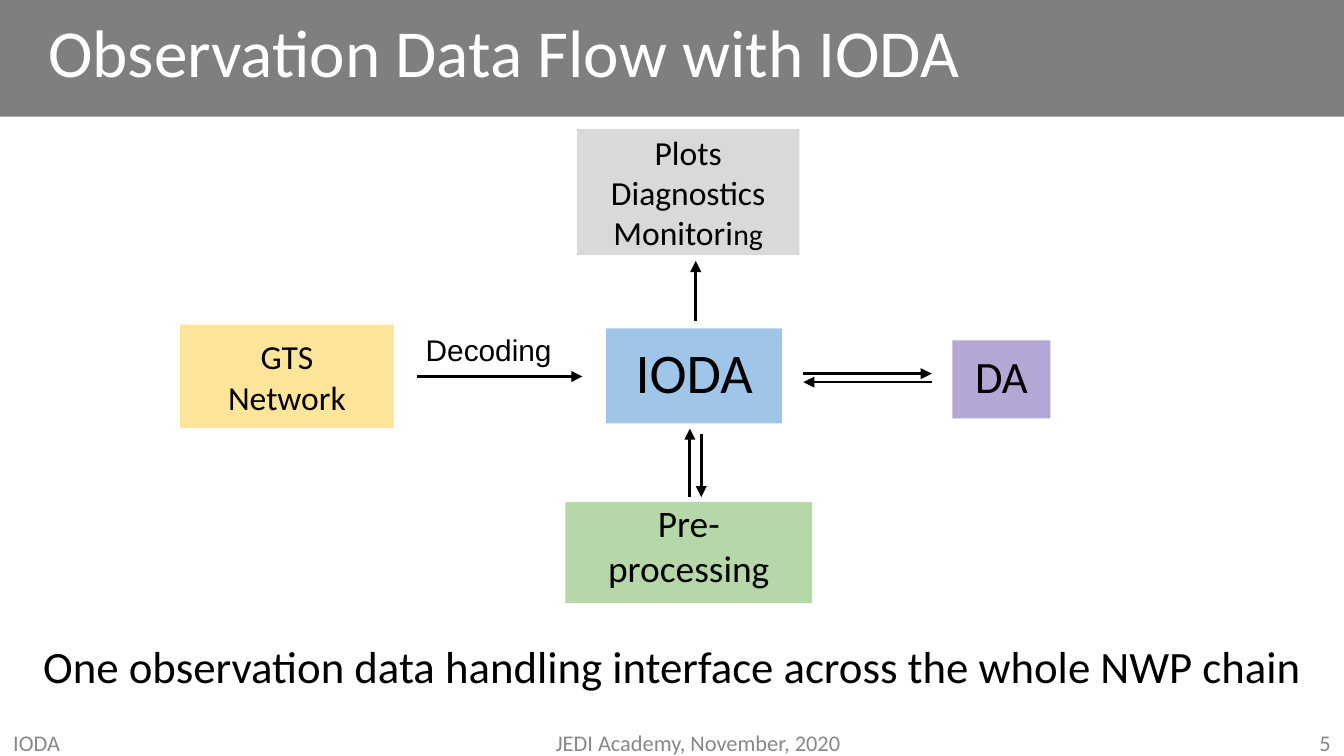
from lxml.etree import SubElement
from pptx import Presentation
from pptx.dml.color import RGBColor
from pptx.enum.shapes import MSO_CONNECTOR as Connector, MSO_SHAPE as Shape
from pptx.enum.text import MSO_ANCHOR as Anchor, MSO_AUTO_SIZE as AutoSize, PP_ALIGN as Align
from pptx.oxml.ns import qn
from pptx.util import Pt

COLORS = {
    "black": "000000",
    "white": "FFFFFF",
    "footer": "888888",
    "network": "FFE599",
    "ioda": "9FC5E8",
    "assimilation": "B4A7D6",
    "plots": "D9D9D9",
    "preprocessing": "B6D7A8",
}


def color(name):
    return RGBColor.from_string(COLORS[name])


def write(frame, text, size=18, ink="black", font="Calibri", align=Align.CENTER,
          anchor=Anchor.MIDDLE, insets=(7.2, 7.2, 7.2, 7.2), wrap=True, ending=None):
    frame.auto_size = AutoSize.NONE
    frame.word_wrap = wrap
    frame.vertical_anchor = anchor
    frame.margin_left, frame.margin_top, frame.margin_right, frame.margin_bottom = map(Pt, insets)
    for index, line in enumerate(text.split("\n")):
        para = frame.paragraphs[0] if index == 0 else frame.add_paragraph()
        para.alignment = align
        para.add_run().text = line
    if ending:
        para.add_run().text = ending[0]
    for para in frame.paragraphs:
        for span in para.runs:
            span.font.name = font
            span.font.size = Pt(size)
            span.font.color.rgb = color(ink)
    if ending:
        frame.paragraphs[-1].runs[-1].font.size = Pt(ending[1])


class FlowSlide:
    line_width = Pt(1.5)
    small_insets = (7.2, 3.6, 7.2, 3.6)

    def __init__(self, deck):
        self.slide = deck.slides.add_slide(deck.slide_layouts[5])
        self.shapes = self.slide.shapes

    def rectangle(self, place, fill):
        box = self.shapes.add_shape(Shape.RECTANGLE, *map(Pt, place))
        box.shadow.inherit = False
        box.fill.solid()
        box.fill.fore_color.rgb = color(fill)
        box.line.fill.background()
        return box

    def title(self, text, place, bar_place):
        title = self.shapes.title
        title.left, title.top, title.width, title.height = map(Pt, place)
        write(title.text_frame, text, size=36, ink="white", align=Align.LEFT,
              insets=self.small_insets)
        bar = self.rectangle(bar_place, "black")
        tint = bar.element.spPr.find(qn("a:solidFill"))[0]
        SubElement(tint, qn("a:alpha")).set("val", "50000")
        title.element.addprevious(bar.element)

    def box(self, text, place, fill, **style):
        write(self.rectangle(place, fill).text_frame, text, **style)

    def label(self, text, place, **style):
        label = self.shapes.add_textbox(*map(Pt, place))
        write(label.text_frame, text, **style)

    def arrow(self, *ends):
        arrow = self.shapes.add_connector(Connector.STRAIGHT, *map(Pt, ends))
        arrow.line.color.rgb = color("black")
        arrow.line.width = self.line_width
        properties = arrow.element.spPr
        SubElement(properties.find(qn("a:ln")), qn("a:tailEnd")).set("type", "triangle")
        SubElement(properties, qn("a:effectLst"))


def main():
    deck = Presentation()
    deck.slide_width, deck.slide_height = Pt(720), Pt(405)
    flow = FlowSlide(deck)
    flow.title("Observation Data Flow with IODA", (18.7, 0, 598.3, 54), (0, 0, 720, 62.6))

    flow.box("GTS\nNetwork", (96.5, 174, 114.5, 55.4), "network")
    flow.box("IODA", (324.7, 175.9, 94.3, 51), "ioda", size=30, insets=(7.2, 2.2, 7.2, 7.2))
    flow.box("DA", (510.2, 182.4, 52.6, 41.7), "assimilation", size=24,
             insets=(7.2, 2.9, 7.2, 7.2))
    flow.box("Plots\nDiagnostics\nMonitori", (309, 69.1, 119.3, 67.6), "plots",
             ending=("ng", 16))
    flow.box("Pre-processing", (302.9, 269, 132.2, 54), "preprocessing", size=20,
             anchor=Anchor.BOTTOM)

    flow.arrow(223.4, 201.7, 312, 201.7)
    flow.arrow(430.4, 200.2, 499.2, 200.2)
    flow.arrow(499.2, 204.7, 430.4, 204.7)
    flow.arrow(372.7, 172, 372.7, 139.8)
    flow.arrow(369.6, 266.2, 369.6, 229.6)
    flow.arrow(375.7, 232.6, 375.7, 266.4)

    flow.label("Decoding", (221, 174.2, 82.8, 26.6), size=16, font="Arial",
               align=Align.LEFT, anchor=Anchor.TOP, insets=flow.small_insets, wrap=False)
    flow.label("One observation data handling interface across the whole NWP chain",
               (0, 334.8, 720, 55.4), size=24, anchor=Anchor.TOP,
               insets=(2.9, 7.2, 2.9, 7.2))

    footers = [
        ("IODA", 0, 168, Align.LEFT),
        ("JEDI Academy, November, 2020", 260, 228, Align.CENTER),
        ("5", 552, 168, Align.RIGHT),
    ]
    for text, left, width, align in footers:
        flow.label(text, (left, 390.2, width, 14.8), size=12, ink="footer",
                   align=align, insets=flow.small_insets)

    deck.save("out.pptx")


if __name__ == "__main__":
    main()
